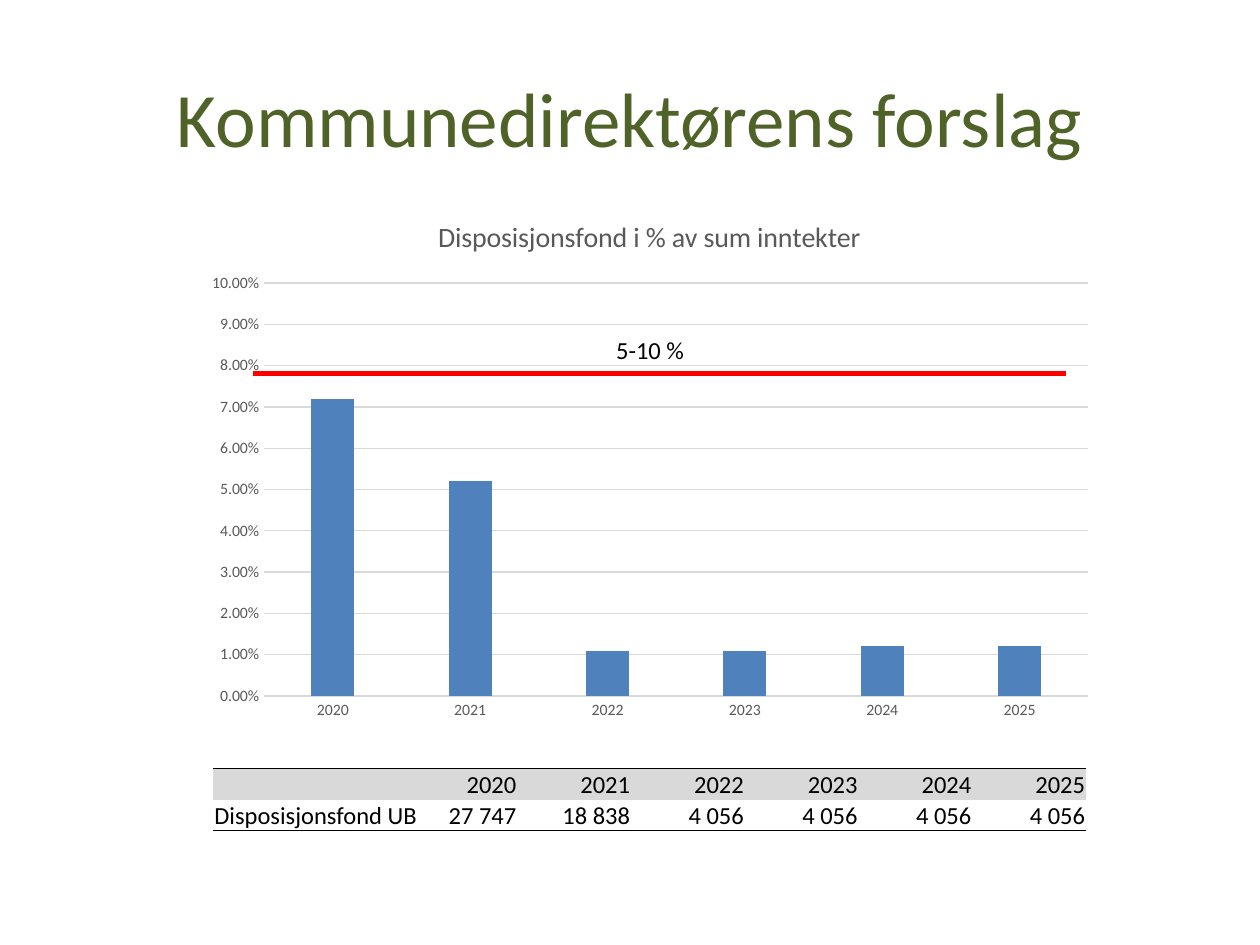
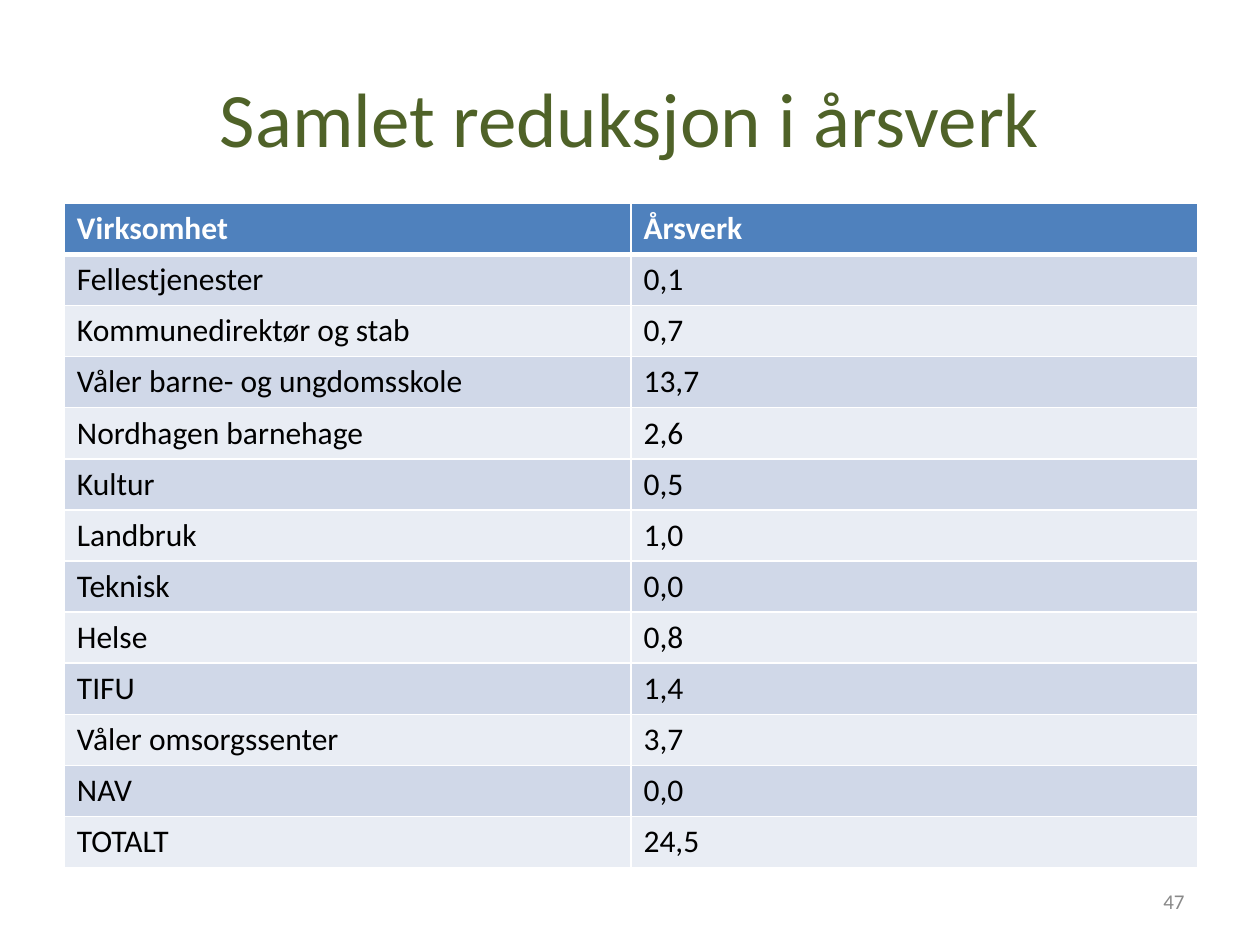
"""Build two budget slides: the reserve fund chart and the staffing reductions."""
from lxml import etree
from pptx import Presentation
from pptx.chart.data import CategoryChartData
from pptx.dml.color import RGBColor
from pptx.enum.chart import XL_CHART_TYPE, XL_TICK_MARK
from pptx.enum.shapes import MSO_CONNECTOR
from pptx.enum.text import MSO_ANCHOR, PP_ALIGN
from pptx.oxml.ns import qn
from pptx.util import Pt

LEFT, CENTER, RIGHT = PP_ALIGN.LEFT, PP_ALIGN.CENTER, PP_ALIGN.RIGHT
TOP, MIDDLE, BOTTOM = MSO_ANCHOR.TOP, MSO_ANCHOR.MIDDLE, MSO_ANCHOR.BOTTOM
NO_TICKS = XL_TICK_MARK.NONE
COLUMNS = XL_CHART_TYPE.COLUMN_CLUSTERED
STRAIGHT = MSO_CONNECTOR.STRAIGHT

FONT = "Calibri"
COLORS = {
    "title": "4F6228", "text": "000000", "white": "FFFFFF", "blue": "4F81BD",
    "axis": "595959", "grid": "D9D9D9", "target": "FF0000",
    "odd": "D0D8E8", "even": "E9EDF4", "number": "898989",
}
PLAIN_TABLE_STYLE = "{2D5ABB26-0587-4C30-8999-92F81FD0307C}"
TITLE_BOX = (36, 21.6, 648, 90)
TITLE_ONLY_LAYOUT = 5

FUND_TITLE = "Kommunedirektørens forslag"
FUND_CHART_TITLE = "Disposisjonsfond i % av sum inntekter"
FUND_TARGET = "5-10 %"
FUND_CHART_BOX = (111, 111.6, 521.3, 306)
YEARS = ["2020", "2021", "2022", "2023", "2024", "2025"]
FUND_SHARES = [0.072, 0.052, 0.011, 0.011, 0.012, 0.012]
FUND_ROWS = [
    ["", *YEARS],
    ["Disposisjonsfond UB", "27 747", "18 838", "4 056", "4 056", "4 056", "4 056"],
]

STAFF_TITLE = "Samlet reduksjon i årsverk"
STAFF_ROWS = [
    ("Virksomhet", "Årsverk"),
    ("Fellestjenester", "0,1"),
    ("Kommunedirektør og stab", "0,7"),
    ("Våler barne- og ungdomsskole", "13,7"),
    ("Nordhagen barnehage", "2,6"),
    ("Kultur", "0,5"),
    ("Landbruk", "1,0"),
    ("Teknisk", "0,0"),
    ("Helse", "0,8"),
    ("TIFU", "1,4"),
    ("Våler omsorgssenter", "3,7"),
    ("NAV", "0,0"),
    ("TOTALT", "24,5"),
]
STAFF_PAGE = "47"


def rgb(name):
    return RGBColor.from_string(COLORS[name])


def points(*lengths):
    return [Pt(length) for length in lengths]


def set_font(font, size, color, bold=False):
    font.name, font.size, font.bold = FONT, Pt(size), bold
    font.color.rgb = rgb(color)


def write(frame, text, size, color, align, bold=False):
    frame.text = text
    paragraph = frame.paragraphs[0]
    paragraph.alignment = align
    set_font(paragraph.font, size, color, bold)
    if not text:
        etree.SubElement(paragraph._p, qn("a:endParaRPr"), sz=str(size * 100))


def add_slide(presentation, text):
    slide = presentation.slides.add_slide(presentation.slide_layouts[TITLE_ONLY_LAYOUT])
    title = slide.shapes.title
    title.left, title.top, title.width, title.height = points(*TITLE_BOX)
    write(title.text_frame, text, 44, "title", CENTER)
    return slide


def add_label(slide, box, text, size, color, align, anchor=TOP):
    frame = slide.shapes.add_textbox(*points(*box)).text_frame
    frame.word_wrap = True
    frame.vertical_anchor = anchor
    write(frame, text, size, color, align)


def add_plain_table(slide, left, top, widths, row_height, row_count):
    box = points(left, top, sum(widths), row_height * row_count)
    table = slide.shapes.add_table(row_count, len(widths), *box).table
    table.first_row = table.horz_banding = False
    table._tbl.tblPr.find(qn("a:tableStyleId")).text = PLAIN_TABLE_STYLE
    for column, width in zip(table.columns, widths):
        column.width = Pt(width)
    for row in table.rows:
        row.height = Pt(row_height)
    return table


def set_borders(cell, color, **widths):
    properties = cell._tc.get_or_add_tcPr()
    for side in "LRTB":
        if side in widths:
            line = etree.SubElement(properties, qn(f"a:ln{side}"), w=str(Pt(widths[side])))
            fill = etree.SubElement(line, qn("a:solidFill"))
            etree.SubElement(fill, qn("a:srgbClr"), val=COLORS[color])


def fill_cell(cell, color):
    cell.fill.solid()
    cell.fill.fore_color.rgb = rgb(color)


def place(element, **lengths):
    """Give a chart part a manual layout from lengths in points inside the chart."""
    layout = element.find(qn("c:layout"))
    if layout is None:
        layout = etree.Element(qn("c:layout"))
        text = element.find(qn("c:tx"))
        element.insert(0 if text is None else element.index(text) + 1, layout)
    for child in list(layout):
        layout.remove(child)
    manual = etree.SubElement(layout, qn("c:manualLayout"))
    if "w" in lengths:
        etree.SubElement(manual, qn("c:layoutTarget"), val="inner")
    for key in "xy":
        etree.SubElement(manual, qn(f"c:{key}Mode"), val="edge")
    chart_width, chart_height = FUND_CHART_BOX[2:]
    for key, length in lengths.items():
        fraction = length / (chart_width if key in "xw" else chart_height)
        etree.SubElement(manual, qn(f"c:{key}"), val=f"{fraction:.4f}")


def format_axis(axis):
    axis.major_tick_mark = axis.minor_tick_mark = NO_TICKS
    set_font(axis.tick_labels.font, 9, "axis")


def draw_line(line, color, width):
    line.color.rgb = rgb(color)
    line.width = Pt(width)


def add_fund_chart(slide):
    data = CategoryChartData(number_format="0.00%")
    data.categories = YEARS
    data.add_series("Series 1", FUND_SHARES)
    chart = slide.shapes.add_chart(COLUMNS, *points(*FUND_CHART_BOX), data).chart
    set_font(chart.font, 10, "text")
    chart.has_legend = False
    chart.has_title = True
    write(chart.chart_title.text_frame, FUND_CHART_TITLE, 16, "axis", CENTER)
    chart.chart_title.include_in_layout = False
    place(chart.chart_title._element, x=136.5, y=10.2)
    place(chart._chartSpace.chart.plotArea, x=40, y=50.2, w=471, h=236)

    plot = chart.plots[0]
    plot.gap_width, plot.overlap, plot.vary_by_categories = 219, -27, False
    bars = plot.series[0].format.fill
    bars.solid()
    bars.fore_color.rgb = rgb("blue")

    format_axis(chart.category_axis)
    draw_line(chart.category_axis.format.line, "grid", 0.75)
    values = chart.value_axis
    format_axis(values)
    values.minimum_scale, values.maximum_scale, values.major_unit = 0, 0.1, 0.01
    values.tick_labels.number_format = "0.00%"
    values.tick_labels.number_format_is_linked = False
    values.format.line.fill.background()
    draw_line(values.major_gridlines.format.line, "grid", 0.75)


def build_fund_slide(presentation):
    slide = add_slide(presentation, FUND_TITLE)
    add_fund_chart(slide)
    target = slide.shapes.add_connector(STRAIGHT, *points(144.7, 213.4, 609.4, 213.4))
    draw_line(target.line, "target", 2.75)
    etree.SubElement(target._element.spPr, qn("a:effectLst"))

    widths = [118.8, 55.2] + [65] * 5
    table = add_plain_table(slide, 121.8, 439.2, widths, 17.7, len(FUND_ROWS))
    for row, texts in enumerate(FUND_ROWS):
        for column, text in enumerate(texts):
            cell = table.cell(row, column)
            cell.margin_left = cell.margin_right = cell.margin_top = Pt(0.72)
            cell.margin_bottom = Pt(0)
            cell.vertical_anchor = BOTTOM
            write(cell.text_frame, text, 14, "text", RIGHT if column else LEFT)
            if row == 0:
                set_borders(cell, "text", T=0.5)
                fill_cell(cell, "grid")
            else:
                set_borders(cell, "text", B=0.5)
    add_label(slide, (332, 188, 79, 24.2), FUND_TARGET, 14, "text", CENTER)


def build_staff_slide(presentation):
    slide = add_slide(presentation, STAFF_TITLE)
    table = add_plain_table(slide, 36.8, 116.2, [323.8] * 2, 29.2, len(STAFF_ROWS))
    for row, texts in enumerate(STAFF_ROWS):
        header = row == 0
        for column, text in enumerate(texts):
            cell = table.cell(row, column)
            write(cell.text_frame, text, 18, "white" if header else "text", LEFT, header)
            set_borders(cell, "white", L=1, R=1, T=3 if row == 1 else 1, B=3 if header else 1)
            fill_cell(cell, "blue" if header else "odd" if row % 2 else "even")
    add_label(slide, (516, 500.5, 168, 28.8), STAFF_PAGE, 12, "number", RIGHT, MIDDLE)


def main():
    presentation = Presentation()
    presentation.slide_width, presentation.slide_height = points(720, 540)
    build_fund_slide(presentation)
    build_staff_slide(presentation)
    presentation.save("out.pptx")


if __name__ == "__main__":
    main()
